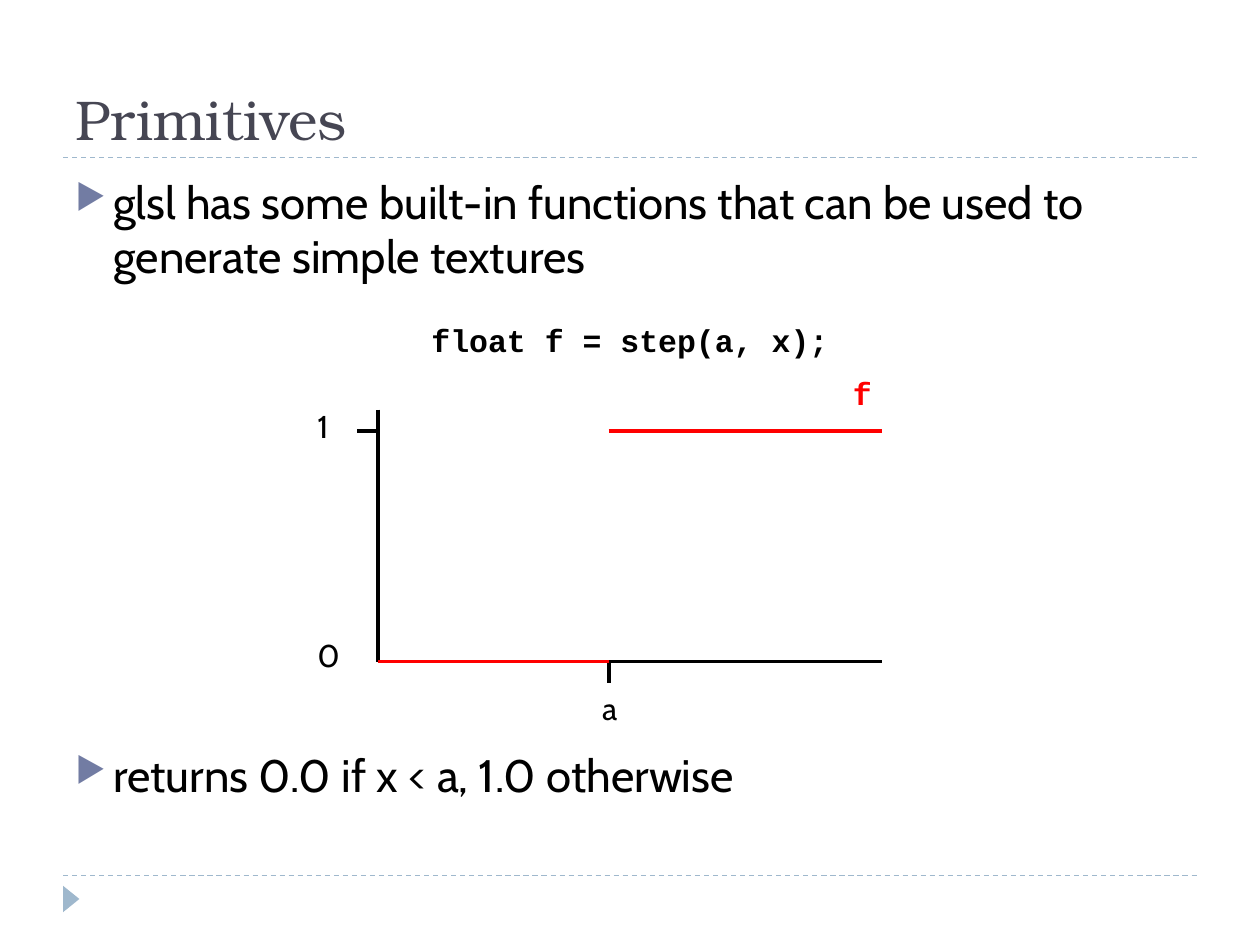
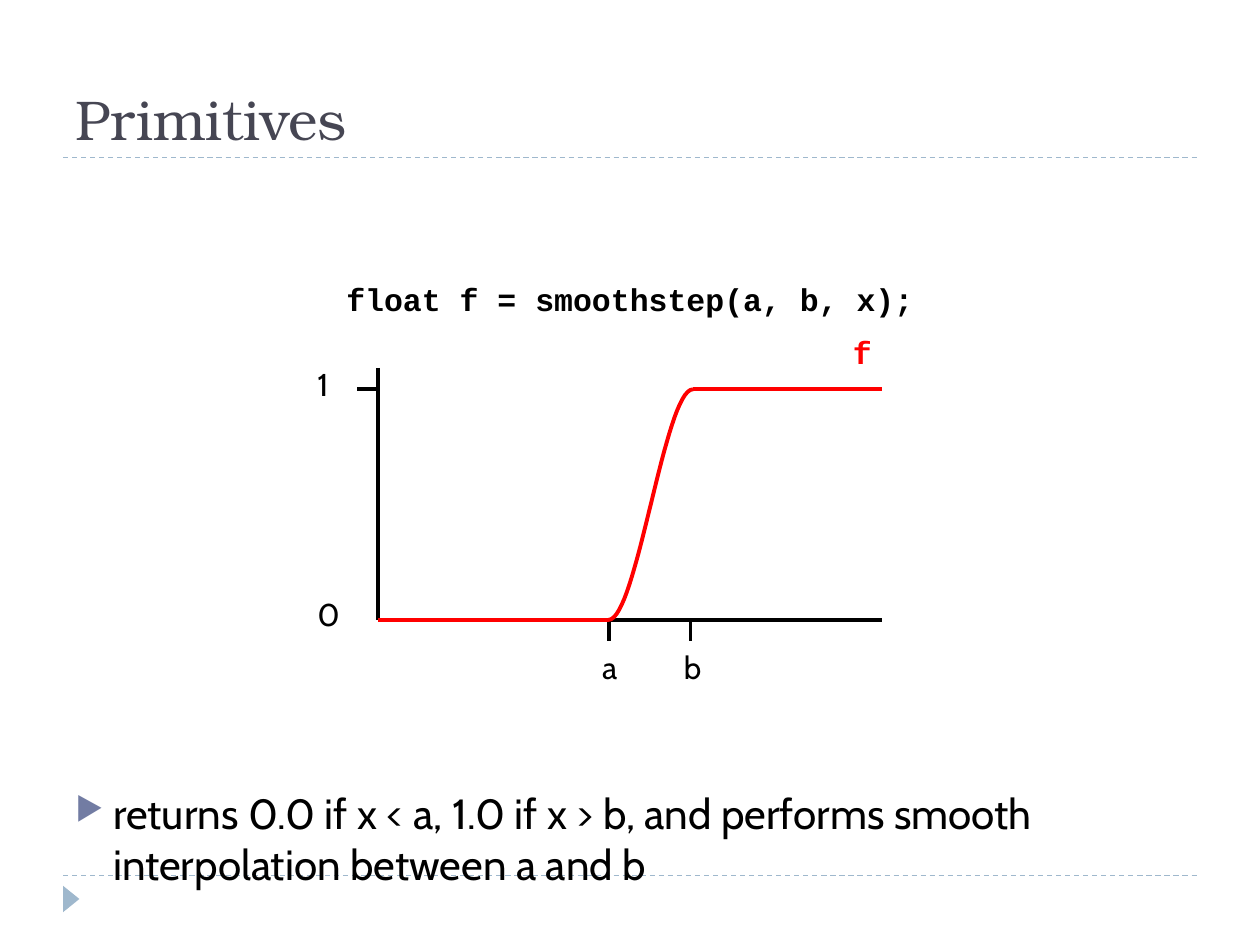
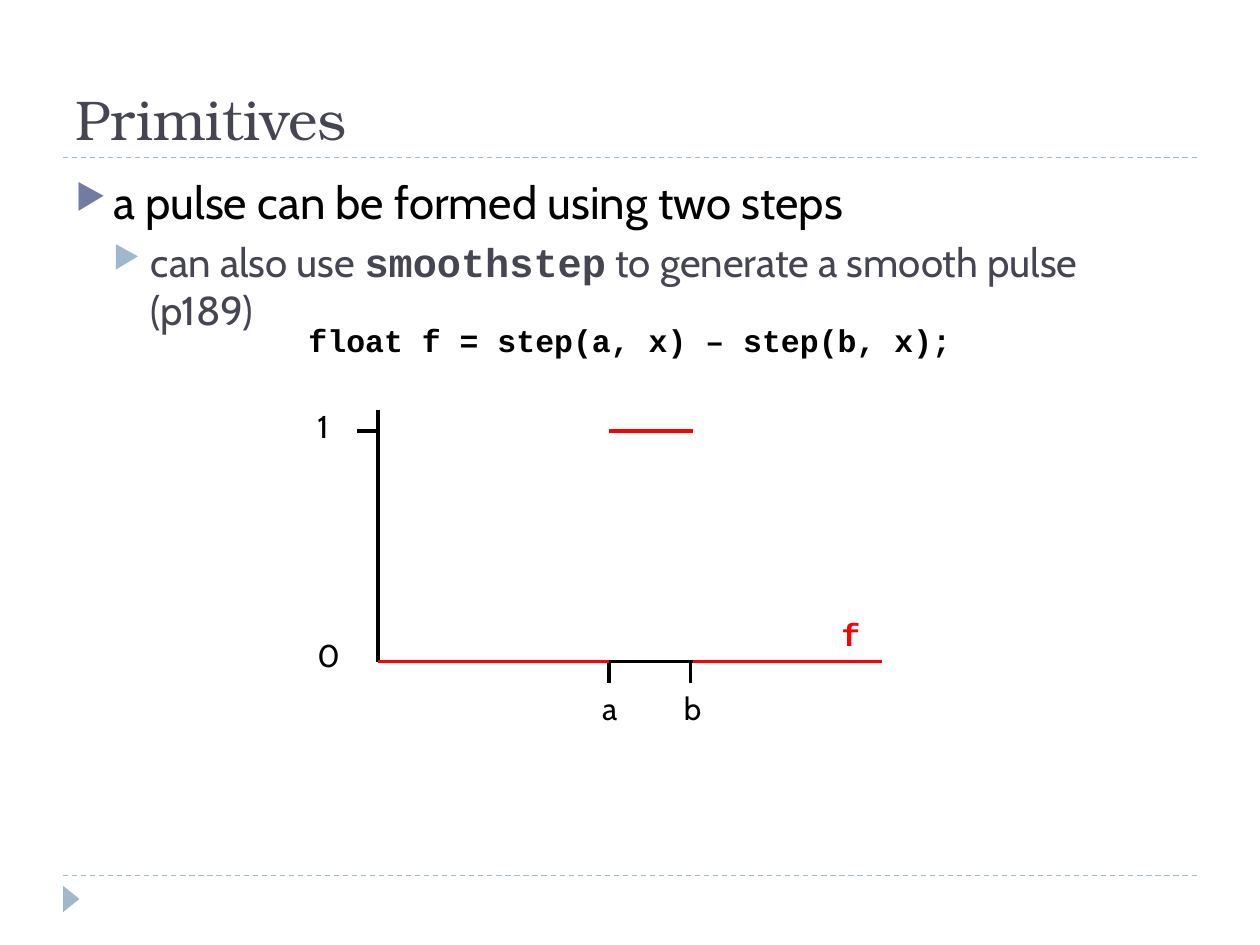
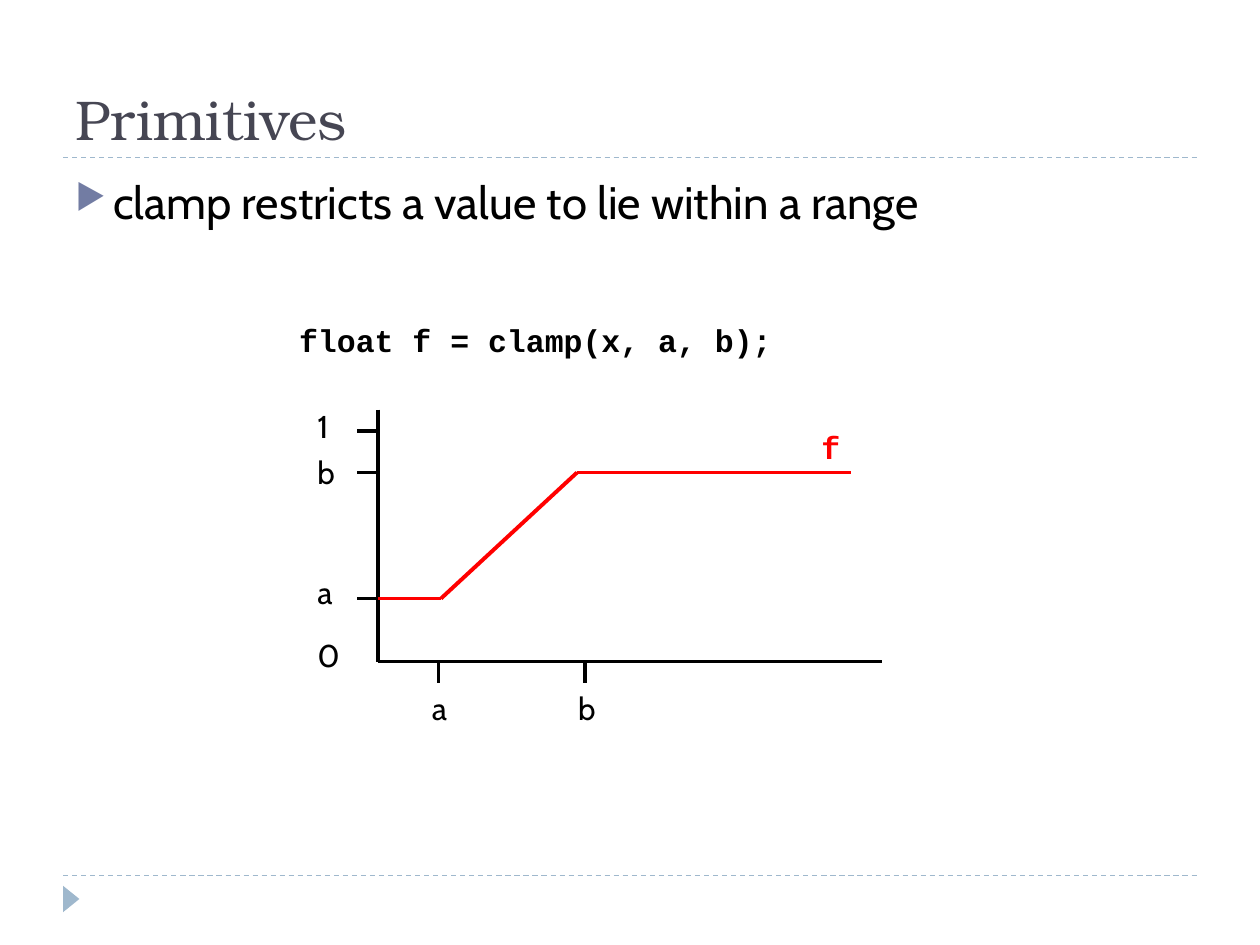
from itertools import pairwise

from lxml.etree import SubElement
from pptx import Presentation
from pptx.dml.color import RGBColor
from pptx.enum.dml import MSO_LINE_DASH_STYLE as DASH
from pptx.enum.shapes import MSO_CONNECTOR as CONNECTOR, MSO_SHAPE as SHAPE
from pptx.enum.text import MSO_ANCHOR as ANCHOR, MSO_AUTO_SIZE as AUTO_SIZE
from pptx.oxml.ns import qn
from pptx.util import Inches, Pt

BLACK = RGBColor(0x00, 0x00, 0x00)
RED = RGBColor(0xFF, 0x00, 0x00)
SLATE = RGBColor(0x46, 0x46, 0x53)
INDIGO = RGBColor(0x72, 0x7C, 0xA3)
PALE_BLUE = RGBColor(0x9F, 0xB8, 0xCD)

TITLE = {"name": "TeX Gyre Bonum", "size": Pt(32), "color": SLATE}
POINT = {"name": "Cabin", "size": Pt(26), "color": BLACK}
SMALL_POINT = POINT | {"size": Pt(24.1)}
SUBPOINT = {"name": "Cabin", "size": Pt(23), "color": SLATE}
SUBPOINT_CODE = SUBPOINT | {"name": "Courier New", "bold": True}
LABEL = {"name": "Cabin", "size": Pt(18), "color": BLACK}
CODE = {"name": "Courier New", "size": Pt(18), "color": BLACK, "bold": True}
CURVE_NAME = CODE | {"color": RED}

# Bullet colour and left indent in inches, by level
LEVELS = [(INDIGO, 0.3), (PALE_BLUE, 0.6)]
HANGING = 0.3

PLOT_LEFT, PLOT_TOP = 3, 3.25
PLOT_WIDTH, PLOT_HEIGHT = 4, 2
TICK = 0.17
LABEL_HEIGHT = 0.4
CODE_CHAR = 0.15
# Distances from the plot's origin, in inches
ONE = 1.83
STEP_A, STEP_B = 1.83, 2.5
ZERO_LABEL = ("0", 0, 0.25)
ONE_LABEL = ("1", ONE, 0.24)


def add_span(para, text, style):
    span = para.add_run()
    span.text = text
    for name, value in style.items():
        if name == "color":
            span.font.color.rgb = value
        else:
            setattr(span.font, name, value)


def add_line(page, start, end, color, width=2.25, dash=None):
    points = [Inches(value) for value in (*start, *end)]
    line = page.shapes.add_connector(CONNECTOR.STRAIGHT, *points)
    line.line.color.rgb = color
    line.line.width = Pt(width)
    if dash:
        line.line.dash_style = dash
    SubElement(line._element.spPr, qn("a:effectLst"))


def add_text_box(page, left, top, width, height):
    return page.shapes.add_textbox(*map(Inches, (left, top, width, height)))


def add_label(page, text, left, top, width, style):
    """Add one unwrapped line of text."""
    frame = add_text_box(page, left, top, width, LABEL_HEIGHT).text_frame
    frame.word_wrap = False
    frame.auto_size = AUTO_SIZE.SHAPE_TO_FIT_TEXT
    add_span(frame.paragraphs[0], text, style)


def set_bullet(para, level):
    color, indent = LEVELS[level]
    props = para._p.get_or_add_pPr()
    props.set("marL", str(Inches(indent)))
    props.set("indent", str(-Inches(HANGING)))
    holder = SubElement(props, qn("a:buClr"))
    SubElement(holder, qn("a:srgbClr"), val=str(color))
    SubElement(props, qn("a:buSzPct"), val="76000")
    SubElement(props, qn("a:buChar"), char="▶")


def add_body(page, points, top=1.33, height=5.4):
    """Add bulleted points, each given as (level, space before, spans)."""
    frame = add_text_box(page, 0.5, top, 9, height).text_frame
    frame.word_wrap = True
    for index, (level, space, spans) in enumerate(points):
        para = frame.add_paragraph() if index else frame.paragraphs[0]
        para.space_before = Pt(space)
        set_bullet(para, level)
        for text, style in spans:
            add_span(para, text, style)


def add_page(deck, title):
    """Add a slide with the shared rules, footer marker and title."""
    page = deck.slides.add_slide(deck.slide_layouts[6])
    for height in (6.95, 1.25):
        add_line(page, (0.5, height), (9.5, height), PALE_BLUE, 0.75, DASH.DASH)
    marker = page.shapes.add_shape(
        SHAPE.ISOSCELES_TRIANGLE, *map(Inches, (0.46, 7.07, 0.21, 0.13))
    )
    marker.rotation = 90
    marker.shadow.inherit = False
    marker.fill.solid()
    marker.fill.fore_color.rgb = PALE_BLUE
    marker.line.fill.background()

    frame = add_text_box(page, 0.5, 0.17, 9, 1.08).text_frame
    frame.word_wrap = True
    frame.vertical_anchor = ANCHOR.BOTTOM
    add_span(frame.paragraphs[0], title, TITLE)
    return page


class Plot:
    """A function plot whose points are inches right of and above its origin."""

    def __init__(self, page, top=PLOT_TOP):
        self.page = page
        self.top = top
        self.draw([(0, PLOT_HEIGHT), (0, 0), (PLOT_WIDTH / 2, 0), (PLOT_WIDTH, 0)], BLACK)

    def place(self, x, y):
        return PLOT_LEFT + x, self.top + PLOT_HEIGHT - y

    def draw(self, points, color=RED):
        for start, end in pairwise(points):
            add_line(self.page, self.place(*start), self.place(*end), color)

    def mark_x(self, marks):
        for text, x in marks:
            self.draw([(x, 0), (x, -TICK)], BLACK)
            add_label(self.page, text, *self.place(x - 0.15, -TICK), 0.33, LABEL)

    def mark_y(self, marks):
        """Mark heights, each given as (text, height, rise of the label)."""
        for text, y, rise in marks:
            if y:
                self.draw([(0, y), (-TICK, y)], BLACK)
            add_label(self.page, text, *self.place(-0.58, y + rise), 0.33, LABEL)

    def name_curve(self, x, y):
        add_label(self.page, "f", *self.place(x, y), 0.35, CURVE_NAME)

    def add_code(self, text, center=5):
        width = len(text) * CODE_CHAR + 0.2
        add_label(self.page, text, center - width / 2, self.top - 0.75, width, CODE)

    def draw_smoothstep(self, start, end, steps=32):
        def point(index):
            t = index / steps
            x, y = self.place(start + (end - start) * t, ONE * t * t * (3 - 2 * t))
            return Inches(x), Inches(y)

        points = [point(index) for index in range(steps + 1)]
        builder = self.page.shapes.build_freeform(*points[0])
        builder.add_line_segments(points[1:], close=False)
        curve = builder.convert_to_shape()
        curve.shadow.inherit = False
        curve.fill.background()
        curve.line.color.rgb = RED
        curve.line.width = Pt(2.25)


def build_step(deck):
    page = add_page(deck, "Primitives")
    intro = "glsl has some built-in functions that can be used to generate simple textures"
    add_body(page, [
        (0, 0, [(intro, POINT)]),
        (0, 265, [("returns 0.0 if x < a, 1.0 otherwise", POINT)]),
    ])
    plot = Plot(page)
    plot.mark_x([("a", STEP_A)])
    plot.mark_y([ZERO_LABEL, ONE_LABEL])
    plot.draw([(0, 0), (STEP_A, 0)])
    plot.draw([(STEP_A, ONE), (PLOT_WIDTH, ONE)])
    plot.add_code("float f = step(a, x);")
    plot.name_curve(3.67, 2.33)


def build_smoothstep(deck):
    page = add_page(deck, "Primitives")
    summary = (
        "returns 0.0 if x < a, 1.0 if x > b, "
        "and performs smooth interpolation between a and b"
    )
    add_body(page, [(0, 0, [(summary, SMALL_POINT)])], top=6.2, height=0.9)
    plot = Plot(page, top=2.92)
    plot.mark_x([("a", STEP_A), ("b", 2.48)])
    plot.mark_y([ZERO_LABEL, ONE_LABEL])
    plot.draw([(0, 0), (STEP_A, 0)])
    plot.draw([(STEP_B, ONE), (PLOT_WIDTH, ONE)])
    plot.draw_smoothstep(STEP_A, STEP_B)
    plot.add_code("float f = smoothstep(a, b, x);")
    plot.name_curve(3.67, 2.33)


def build_pulse(deck):
    page = add_page(deck, "Primitives")
    add_body(page, [
        (0, 0, [("a pulse can be formed using two steps", POINT)]),
        (1, 5, [
            ("can also use ", SUBPOINT),
            ("smoothstep", SUBPOINT_CODE),
            (" to generate a smooth pulse (p189)", SUBPOINT),
        ]),
    ])
    plot = Plot(page)
    plot.mark_x([("a", STEP_A), ("b", 2.48)])
    plot.mark_y([ZERO_LABEL, ONE_LABEL])
    plot.draw([(0, 0), (STEP_A, 0)])
    plot.draw([(STEP_A, ONE), (STEP_B, ONE)])
    plot.draw([(STEP_B, 0), (PLOT_WIDTH, 0)])
    plot.add_code("float f = step(a, x) – step(b, x);")
    plot.name_curve(3.58, 0.42)


def build_clamp(deck):
    page = add_page(deck, "Primitives")
    add_body(page, [(0, 0, [("clamp restricts a value to lie within a range", POINT)])])
    low, high = 0.5, 1.5
    plot = Plot(page)
    plot.mark_x([("a", 0.48), ("b", 1.64)])
    plot.mark_y([ZERO_LABEL, ONE_LABEL, ("a", low, 0.25), ("b", high, 0.2)])
    plot.draw([(0, low), (0.5, low), (1.58, high), (3.75, high)])
    plot.add_code("float f = clamp(x, a, b);", center=4.25)
    plot.name_curve(3.42, 1.9)


def main():
    deck = Presentation()
    deck.slide_width, deck.slide_height = Inches(10), Inches(7.5)
    for build in (build_step, build_smoothstep, build_pulse, build_clamp):
        build(deck)
    deck.save("out.pptx")


if __name__ == "__main__":
    main()
